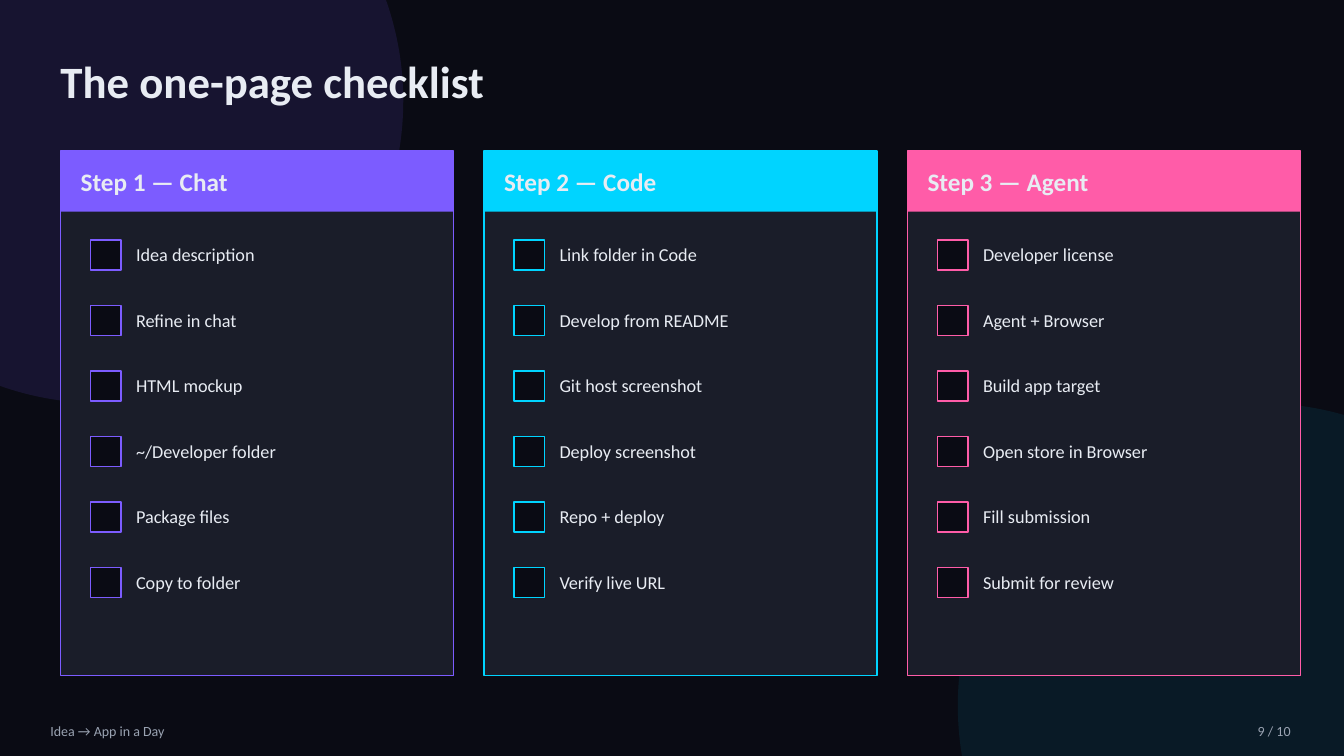
"""Build the one-page checklist slide with three step cards."""
from lxml.etree import SubElement
from pptx import Presentation
from pptx.dml.color import RGBColor
from pptx.enum.shapes import MSO_SHAPE
from pptx.enum.text import MSO_ANCHOR, PP_ALIGN
from pptx.oxml.ns import qn
from pptx.util import Inches, Pt

TITLE = "The one-page checklist"
FOOTER = "Idea → App in a Day"
PAGE = "9 / 10"
STEPS = [
    ("Step 1 — Chat", "7C5CFF",
     ["Idea description", "Refine in chat", "HTML mockup",
      "~/Developer folder", "Package files", "Copy to folder"]),
    ("Step 2 — Code", "00D4FF",
     ["Link folder in Code", "Develop from README", "Git host screenshot",
      "Deploy screenshot", "Repo + deploy", "Verify live URL"]),
    ("Step 3 — Agent", "FF5CA8",
     ["Developer license", "Agent + Browser", "Build app target",
      "Open store in Browser", "Fill submission", "Submit for review"]),
]
GLOWS = [(-2, -2, "7C5CFF", 12), (9.5, 4, "00D4FF", 8)]
BACKGROUND, CARD, INK, MUTED = "0A0B14", "1A1D29", "E8ECF3", "9AA3B2"
FONT = "Calibri"

CARD_LEFT, CARD_TOP, CARD_W, CARD_H = 0.6, 1.5, 3.9, 5.2
CARD_STEP, HEADER_H = 4.2, 0.6
ITEM_TOP, ITEM_STEP, ITEM_H, BOX = 2.3, 0.65, 0.45, 0.3


def paint(color, value):
    color.rgb = RGBColor.from_string(value)


def add_block(s, left, top, width, height, fill, line=None, alpha=None,
              kind=MSO_SHAPE.RECTANGLE):
    sp = s.shapes.add_shape(kind, Inches(left), Inches(top),
                            Inches(width), Inches(height))
    sp.shadow.inherit = False
    sp.fill.solid()
    paint(sp.fill.fore_color, fill)
    if alpha:
        clr = sp.fill._xPr.find(".//" + qn("a:srgbClr"))
        SubElement(clr, qn("a:alpha"), val=str(alpha * 1000))
    if line:
        paint(sp.line.color, line)
        sp.line.width = Pt(1)
    else:
        sp.line.fill.background()


def add_text(s, text, left, top, width, height, size=13, color=INK,
             bold=False, align=PP_ALIGN.LEFT):
    tf = s.shapes.add_textbox(Inches(left), Inches(top),
                              Inches(width), Inches(height)).text_frame
    tf.word_wrap = True
    tf.vertical_anchor = MSO_ANCHOR.MIDDLE
    tf.margin_left = tf.margin_right = tf.margin_top = tf.margin_bottom = 0
    p = tf.paragraphs[0]
    p.alignment = align
    r = p.add_run()
    r.text = text
    r.font.name, r.font.size, r.font.bold = FONT, Pt(size), bold
    paint(r.font.color, color)


def add_step(s, left, heading, accent, items):
    add_block(s, left, CARD_TOP, CARD_W, CARD_H, CARD, line=accent)
    add_block(s, left, CARD_TOP, CARD_W, HEADER_H, accent)
    add_text(s, heading, left + 0.2, CARD_TOP, CARD_W - 0.2, HEADER_H,
             size=18, bold=True)
    for row, item in enumerate(items):
        top = ITEM_TOP + row * ITEM_STEP
        add_block(s, left + 0.3, top + 0.08, BOX, BOX, BACKGROUND, line=accent)
        add_text(s, item, left + 0.75, top, 3, ITEM_H)


def main():
    prs = Presentation()
    prs.slide_width, prs.slide_height = Inches(13.33), Inches(7.5)
    s = prs.slides.add_slide(prs.slide_layouts[6])
    s.background.fill.solid()
    paint(s.background.fill.fore_color, BACKGROUND)
    for left, top, color, alpha in GLOWS:
        add_block(s, left, top, 6, 6, color, alpha=alpha, kind=MSO_SHAPE.OVAL)
    add_text(s, TITLE, 0.6, 0.4, 12, 0.8, size=32, bold=True)
    for col, (heading, accent, items) in enumerate(STEPS):
        add_step(s, CARD_LEFT + col * CARD_STEP, heading, accent, items)
    add_text(s, FOOTER, 0.5, 7.1, 6, 0.3, size=10, color=MUTED)
    add_text(s, PAGE, 12, 7.1, 0.8, 0.3, size=10, color=MUTED,
             align=PP_ALIGN.RIGHT)
    prs.save("out.pptx")


if __name__ == "__main__":
    main()
